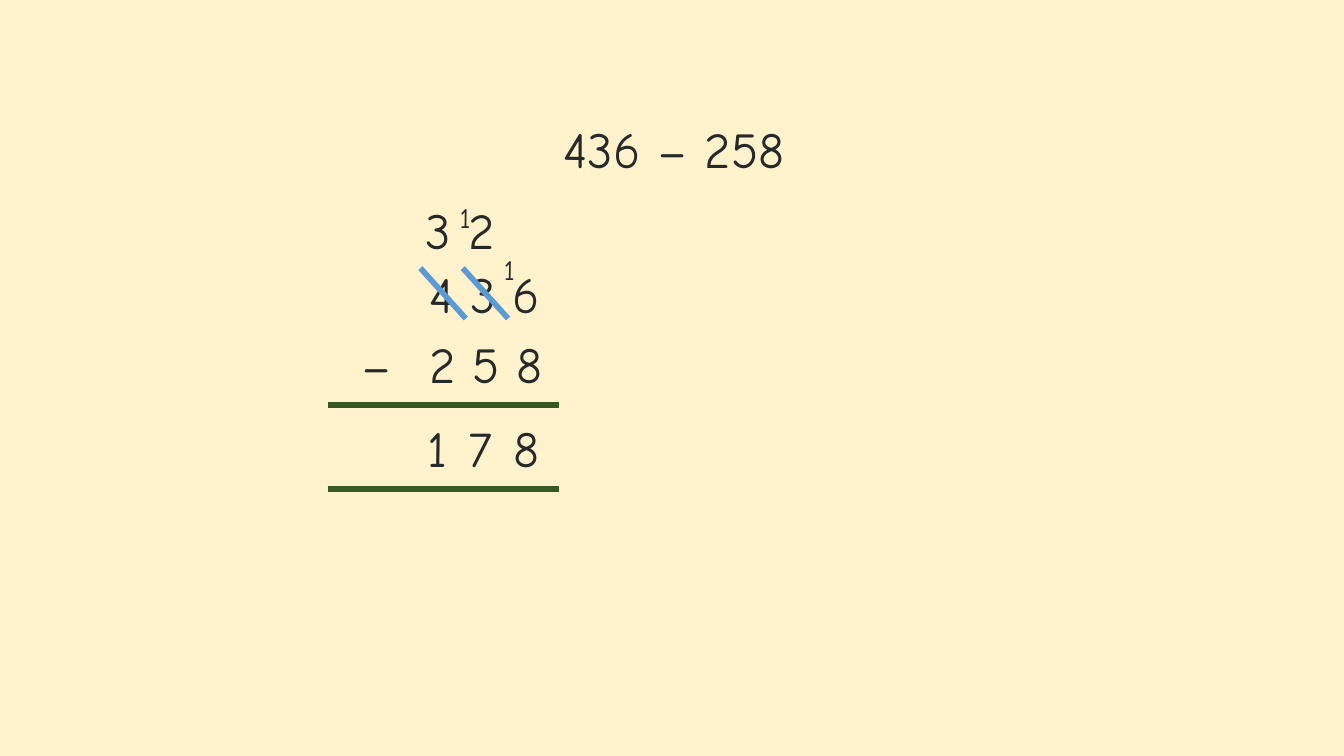
from pptx import Presentation
from pptx.dml.color import RGBColor
from pptx.enum.shapes import MSO_CONNECTOR
from pptx.enum.text import MSO_ANCHOR, MSO_AUTO_SIZE, PP_ALIGN
from pptx.oxml.ns import qn
from pptx.util import Inches, Pt

COLORS = {"background": "FFF2CC", "ink": "252927", "rule": "385723", "strike": "5B9BD5"}


class SubtractionSlide:
    font = "Comic Neue"
    digit_size = 36
    carry_size = 20
    line_width = 4

    def __init__(self, prs):
        self.slide = prs.slides.add_slide(prs.slide_layouts[5])
        fill = self.slide.background.fill
        fill.solid()
        fill.fore_color.rgb = self.color("background")

    def color(self, name):
        return RGBColor.from_string(COLORS[name])

    def set_text(self, sp, text, size):
        tf = sp.text_frame
        tf.text = text
        tf.word_wrap = False
        tf.auto_size = MSO_AUTO_SIZE.SHAPE_TO_FIT_TEXT
        tf.vertical_anchor = MSO_ANCHOR.TOP
        p = tf.paragraphs[0]
        p.alignment = PP_ALIGN.LEFT
        p.line_spacing = 1.0
        p.space_before = Pt(0)
        font = p.runs[0].font
        font.name = self.font
        font.size = Pt(size)
        font.color.rgb = self.color("ink")

    def title(self, text, left, top, width, height):
        sp = self.slide.shapes.title
        sp.left, sp.top = Inches(left), Inches(top)
        sp.width, sp.height = Inches(width), Inches(height)
        self.set_text(sp, text, self.digit_size)

    def number(self, text, left, top, width):
        sp = self.slide.shapes.add_textbox(
            Inches(left), Inches(top), Inches(width), Inches(0.71))
        self.set_text(sp, text, self.digit_size)

    def carry(self, left, top):
        """Add the small 1 that marks a ten or hundred exchanged."""
        sp = self.slide.shapes.add_textbox(
            Inches(left), Inches(top), Inches(0.33), Inches(0.44))
        self.set_text(sp, "1", self.carry_size)

    def line(self, x1, y1, x2, y2, color):
        sp = self.slide.shapes.add_connector(
            MSO_CONNECTOR.STRAIGHT, Inches(x1), Inches(y1), Inches(x2), Inches(y2))
        sp.line.color.rgb = self.color(color)
        sp.line.width = Pt(self.line_width)
        sp._element.spPr.append(sp._element.makeelement(qn("a:effectLst"), {}))


def main():
    prs = Presentation()
    prs.slide_width, prs.slide_height = Inches(13.33), Inches(7.5)
    s = SubtractionSlide(prs)

    s.title("436 – 258", 5.49, 1.12, 2.58, 0.71)

    s.number("4 3 6", 4.16, 2.56, 1.43)
    s.number("2 5 8", 4.16, 3.26, 1.43)
    s.number("–", 3.49, 3.26, 0.42)

    for y in (4.02, 4.85):
        s.line(3.25, y, 5.54, y, "rule")

    for digit, left in (("3", 4.12), ("2", 4.55)):
        s.number(digit, left, 1.93, 0.51)
    for x in (4.17, 4.59):
        s.line(x, 2.66, x + 0.45, 3.16, "strike")
    for left, top in ((4.46, 1.94), (4.9, 2.46)):
        s.carry(left, top)

    for digit, left, width in (("1", 4.14, 0.43), ("7", 4.55, 0.51), ("8", 4.99, 0.51)):
        s.number(digit, left, 4.09, width)

    prs.save("out.pptx")


if __name__ == "__main__":
    main()
